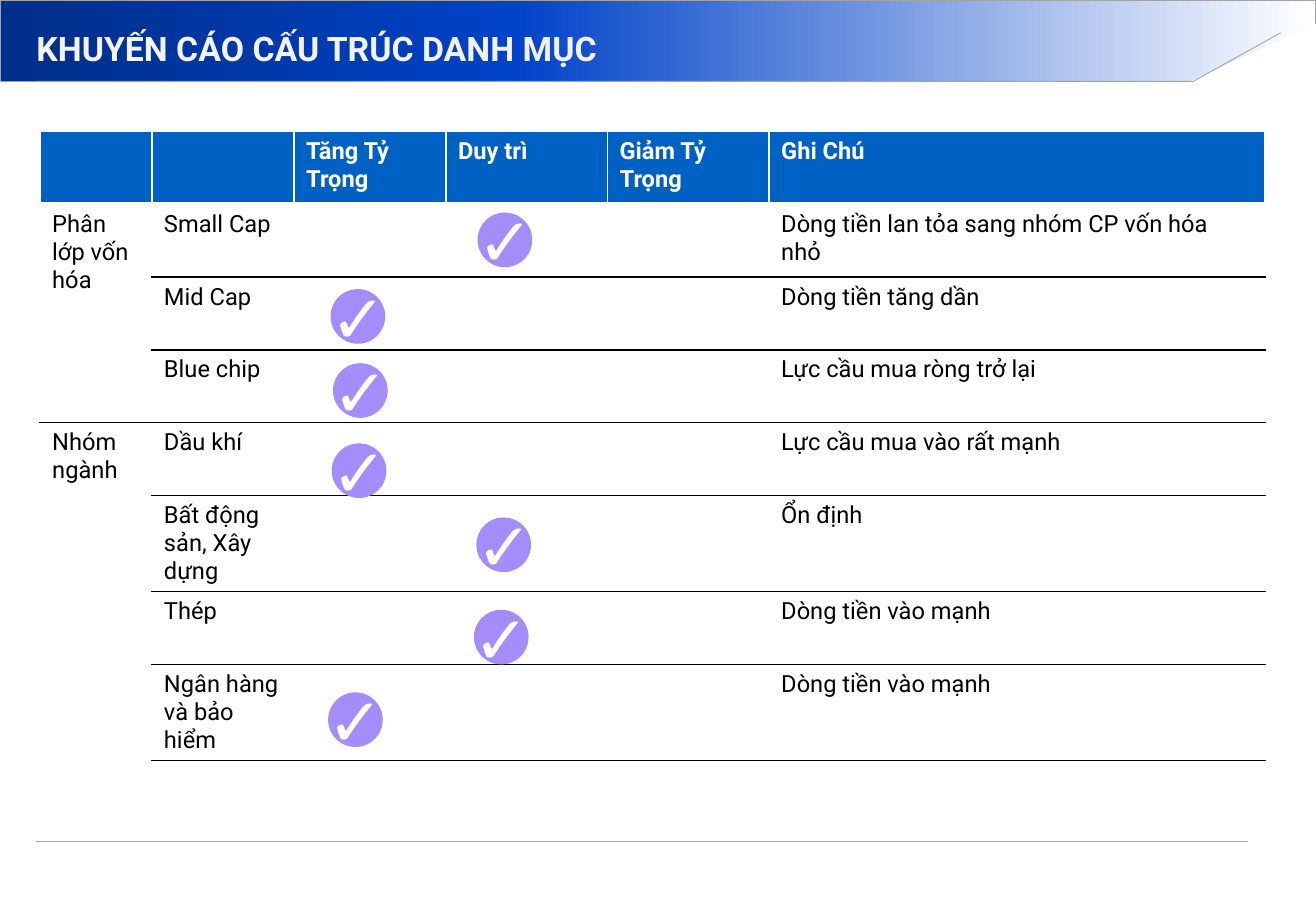
from lxml.etree import SubElement
from copy import deepcopy
from pptx import Presentation
from pptx.dml.color import RGBColor
from pptx.enum.shapes import MSO_CONNECTOR, MSO_SHAPE
from pptx.enum.text import MSO_ANCHOR, PP_ALIGN
from pptx.oxml.ns import qn
from pptx.util import Inches, Pt

COLORS = {
    "navy": "002E89", "royal": "0042C8", "white": "FFFFFF", "gray": "A0A4A7",
    "title": "F2F2F2", "header": "0061C4", "black": "000000", "check": "A48CFA",
}
FONT = "Roboto"
COLUMN_WIDTHS = [0.92, 1.17, 1.25, 1.33, 1.33, 4.08]
ROW_HEIGHTS = [0.6, 0.6, 0.6, 0.6, 0.6, 0.79, 0.6, 0.79]
HEADERS = ["", "", "Tăng Tỷ Trọng", "Duy trì", "Giảm Tỷ Trọng", "Ghi Chú"]
GROUPS = [
    ("Phân lớp vốn hóa", [
        ("Small Cap", "Dòng tiền lan tỏa sang nhóm CP vốn hóa nhỏ"),
        ("Mid Cap", "Dòng tiền tăng dần"),
        ("Blue chip", "Lực cầu mua ròng trở lại"),
    ]),
    ("Nhóm ngành", [
        ("Dầu khí", "Lực cầu mua vào rất mạnh"),
        ("Bất động sản, Xây dựng", "Ổn định"),
        ("Thép", "Dòng tiền vào mạnh"),
        ("Ngân hàng và bảo hiểm", "Dòng tiền vào mạnh"),
    ]),
]
CHECKS = [(3.93, 1.75), (2.72, 2.38), (2.74, 2.99), (2.73, 3.65),
          (3.92, 4.26), (3.9, 5.02), (2.7, 5.7)]


def rgb(name):
    return RGBColor.from_string(COLORS[name])


def style_text(paragraph, size, color, bold=False, font=FONT, align=PP_ALIGN.LEFT):
    paragraph.alignment = align
    paragraph.font.name = font
    paragraph.font.size = Pt(size)
    paragraph.font.bold = bold
    paragraph.font.color.rgb = rgb(color)


def style_line(shape):
    shape.line.color.rgb = rgb("gray")
    shape.line.width = Pt(0.5)


def add_plain_shape(shapes, kind, left, top, width, height, color):
    shape = shapes.add_shape(kind, Inches(left), Inches(top), Inches(width), Inches(height))
    shape.shadow.inherit = False
    shape.fill.solid()
    shape.fill.fore_color.rgb = rgb(color)
    shape.line.fill.background()
    return shape


def fill_gradient(shape, stops):
    shape.fill.gradient()
    shape.fill.gradient_angle = 0
    last_stop = shape.fill.gradient_stops[1]._gs
    last_stop.addprevious(deepcopy(last_stop))
    for stop, (position, color) in zip(shape.fill.gradient_stops, stops):
        stop.position = position
        stop.color.rgb = rgb(color)


def add_header(slide, left, top, width, height):
    band = add_plain_shape(slide.shapes, MSO_SHAPE.RECTANGLE, left, top, width, height, "navy")
    fill_gradient(band, [(0, "navy"), (0.39, "royal"), (1, "white")])
    style_line(band)
    corner = add_plain_shape(slide.shapes, MSO_SHAPE.RIGHT_TRIANGLE,
                             left + width - 1.08, top + 0.19, 1.09, 0.5, "white")
    corner._element.spPr.xfrm.set("flipH", "1")

    builder = slide.shapes.build_freeform(Inches(left + 0.3), Inches(top + height))
    builder.add_line_segments([
        (Inches(left + 9.82), Inches(top + height)),
        (Inches(left + 10.54), Inches(top + 0.27)),
    ], close=False)
    edge = builder.convert_to_shape()
    edge.shadow.inherit = False
    edge.fill.background()
    style_line(edge)

    title = slide.shapes.title
    slide.shapes._spTree.append(title._element)
    title.left, title.top = Inches(left + 0.3), Inches(top + 0.18)
    title.width, title.height = Inches(9.47), Inches(0.43)
    frame = title.text_frame
    frame.margin_left = frame.margin_right = frame.margin_top = frame.margin_bottom = 0
    frame.vertical_anchor = MSO_ANCHOR.MIDDLE
    frame.text = "KHUYẾN CÁO CẤU TRÚC DANH MỤC"
    style_text(frame.paragraphs[0], 20, "title", bold=True)


def add_footer_line(slide, left, top, width):
    line = slide.shapes.add_connector(MSO_CONNECTOR.STRAIGHT, Inches(left), Inches(top),
                                      Inches(left + width), Inches(top))
    style_line(line)
    SubElement(line._element.spPr, qn("a:effectLst"))


def set_borders(cell, top, bottom, bottom_width):
    properties = cell._tc.get_or_add_tcPr()
    borders = [("a:lnL", "white", 1), ("a:lnR", "white", 1),
               ("a:lnT", top, 1), ("a:lnB", bottom, bottom_width)]
    for tag, color, width in borders:
        border = SubElement(properties, qn(tag), w=str(Pt(width)))
        fill = SubElement(border, qn("a:solidFill"))
        SubElement(fill, qn("a:srgbClr"), val=COLORS[color])


def style_cell(cell, row, column):
    if row == 0:
        set_borders(cell, "white", "white", 3)
        cell.fill.solid()
        cell.fill.fore_color.rgb = rgb("header")
    else:
        top = "black" if row == 4 or (row > 1 and column > 0) else "white"
        bottom = "black" if column > 0 or row in (1, 3) else "white"
        set_borders(cell, top, bottom, 1)
        cell.fill.background()
    style_text(cell.text_frame.paragraphs[0], 14, "black" if row else "white", bold=row == 0)


def add_allocation_table(slide, left, top):
    table = slide.shapes.add_table(
        len(ROW_HEIGHTS), len(COLUMN_WIDTHS), Inches(left), Inches(top),
        Inches(sum(COLUMN_WIDTHS)), Inches(sum(ROW_HEIGHTS))).table
    table.first_row = table.horz_banding = False
    for column, width in zip(table.columns, COLUMN_WIDTHS):
        column.width = Inches(width)
    for row, height in zip(table.rows, ROW_HEIGHTS):
        row.height = Inches(height)
    for column, text in enumerate(HEADERS):
        table.cell(0, column).text = text

    first = 1
    for group_name, entries in GROUPS:
        table.cell(first, 0).text = group_name
        for row, (name, note) in enumerate(entries, first):
            table.cell(row, 1).text = name
            table.cell(row, 5).text = note
        table.cell(first, 0).merge(table.cell(first + len(entries) - 1, 0))
        first += len(entries)

    for row in range(len(ROW_HEIGHTS)):
        for column in range(len(COLUMN_WIDTHS)):
            style_cell(table.cell(row, column), row, column)


def add_check(slide, left, top):
    group = slide.shapes.add_group_shape()
    add_plain_shape(group.shapes, MSO_SHAPE.OVAL, left, top, 0.45, 0.45, "check")
    mark = group.shapes.add_textbox(Inches(left - 0.15), Inches(top - 0.16),
                                    Inches(0.76), Inches(0.77))
    frame = mark.text_frame
    frame.word_wrap = False
    frame.vertical_anchor = MSO_ANCHOR.MIDDLE
    frame.text = "✓"
    style_text(frame.paragraphs[0], 40, "white", font="Arial", align=PP_ALIGN.CENTER)


def main():
    presentation = Presentation()
    presentation.slide_width = Inches(10.83)
    presentation.slide_height = Inches(7.5)
    slide = presentation.slides.add_slide(presentation.slide_layouts[5])
    add_header(slide, 0, 0, 10.83, 0.67)
    add_footer_line(slide, 0.3, 6.93, 9.97)
    add_allocation_table(slide, 0.33, 1.08)
    for left, top in CHECKS:
        add_check(slide, left, top)
    presentation.save("out.pptx")


if __name__ == "__main__":
    main()
